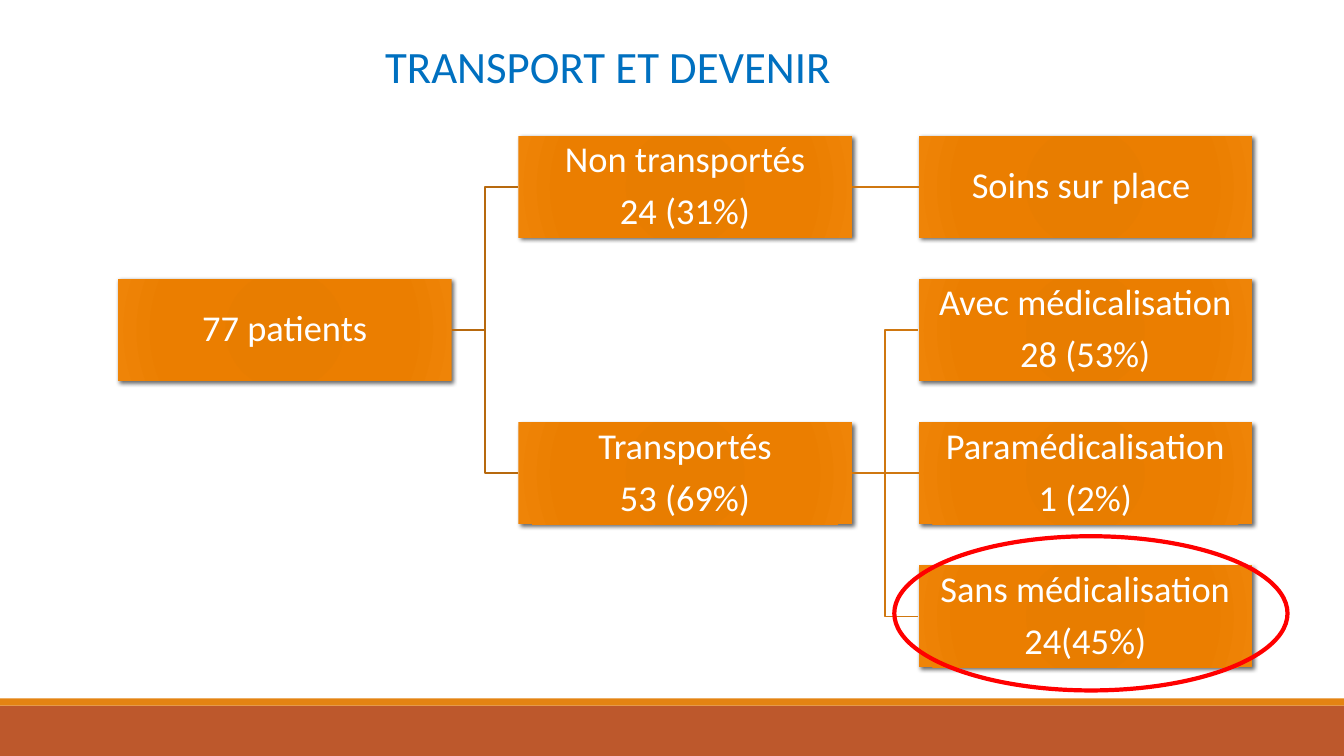
from lxml.etree import SubElement
from pptx import Presentation
from pptx.dml.color import RGBColor
from pptx.enum.shapes import MSO_CONNECTOR, MSO_SHAPE
from pptx.enum.text import MSO_ANCHOR, PP_ALIGN
from pptx.oxml import parse_xml
from pptx.oxml.ns import nsdecls, qn
from pptx.util import Inches, Pt

BLUE = RGBColor(0x00, 0x70, 0xC0)
WHITE = RGBColor(0xFF, 0xFF, 0xFF)
RED = RGBColor(0xFF, 0x00, 0x00)
RUST = RGBColor(0xBD, 0x58, 0x2C)
ORANGE = RGBColor(0xE4, 0x83, 0x12)
FIRST_LINK = RGBColor(0xB7, 0x69, 0x0E)
SECOND_LINK = RGBColor(0xCF, 0x77, 0x10)
BOX_STOPS = [(0, RGBColor(0xE5, 0x7B, 0x00)), (34, RGBColor(0xE8, 0x7D, 0x00)),
             (70, RGBColor(0xEB, 0x7E, 0x00)), (100, RGBColor(0xEF, 0x84, 0x07))]

TITLE = "TRANSPORT ET DEVENIR"
BOXES = {
    "patients": (0, 1, ["77 patients"]),
    "not transported": (1, 0, ["Non transportés", "24 (31%)"]),
    "care on site": (2, 0, ["Soins sur place "]),
    "transported": (1, 2, ["Transportés", "53 (69%)"]),
    "medical": (2, 1, ["Avec médicalisation", "28 (53%)"]),
    "paramedical": (2, 2, ["Paramédicalisation", "1 (2%)"]),
    "no medical": (2, 3, ["Sans médicalisation", "24(45%)"]),
}
LINKS = [
    ("patients", "not transported", FIRST_LINK),
    ("patients", "transported", FIRST_LINK),
    ("not transported", "care on site", SECOND_LINK),
    ("transported", "medical", SECOND_LINK),
    ("transported", "paramedical", SECOND_LINK),
    ("transported", "no medical", SECOND_LINK),
]
BANDS = [(7, 0.5, RUST), (6.93, 0.07, ORANGE)]

SLIDE_WIDTH, SLIDE_HEIGHT = 13.33, 7.5
LEFT, TOP = 1.17, 1.35
COLUMN_STEP, ROW_STEP = 3.97, 1.42
BOX_WIDTH, BOX_HEIGHT = 3.31, 1.01
BOX_FRAME = {"word_wrap": True, "vertical_anchor": MSO_ANCHOR.MIDDLE,
             "margin_left": Inches(0.02), "margin_right": Inches(0.02),
             "margin_top": Inches(0.02), "margin_bottom": Inches(0.02)}
BOX_PARAGRAPH = {"alignment": PP_ALIGN.CENTER, "line_spacing": 0.9, "space_after": Pt(9)}
BOX_FONT = {"name": "Calibri", "size": Pt(26)}
TITLE_PLACE = {"left": Inches(3.72), "top": Inches(0.33),
               "width": Inches(6.94), "height": Inches(0.64)}
TITLE_FONT = {"name": "Calibri", "size": Pt(32)}


def apply(target, values):
    for name, value in values.items():
        setattr(target, name, value)


def add_plain_shape(slide, kind, left, top, width, height):
    shape = slide.shapes.add_shape(kind, Inches(left), Inches(top), Inches(width), Inches(height))
    shape.shadow.inherit = False
    shape.line.fill.background()
    return shape


def style_box(shape):
    shape.fill.gradient()
    properties = shape.element.spPr
    stops = "".join(f'<a:gs pos="{position * 1000}"><a:srgbClr val="{color}"/></a:gs>'
                    for position, color in BOX_STOPS)
    gradient = parse_xml(
        f'<a:gradFill {nsdecls("a")} rotWithShape="1"><a:gsLst>{stops}</a:gsLst>'
        '<a:path path="circle"><a:fillToRect l="100000" t="100000" r="100000" b="100000"/>'
        '</a:path></a:gradFill>')
    properties.replace(properties.find(qn("a:gradFill")), gradient)
    shadow = parse_xml(
        f'<a:outerShdw {nsdecls("a")} blurRad="{Pt(3)}" dist="{Pt(2)}" dir="2700000" '
        'algn="ctr" rotWithShape="0"><a:srgbClr val="000000"><a:alpha val="60000"/>'
        '</a:srgbClr></a:outerShdw>')
    properties.find(qn("a:effectLst")).append(shadow)


def add_box(slide, column, row, lines):
    shape = add_plain_shape(slide, MSO_SHAPE.RECTANGLE, LEFT + column * COLUMN_STEP,
                            TOP + row * ROW_STEP, BOX_WIDTH, BOX_HEIGHT)
    style_box(shape)
    frame = shape.text_frame
    apply(frame, BOX_FRAME)
    frame.text = "\n".join(lines)
    for paragraph in frame.paragraphs:
        apply(paragraph, BOX_PARAGRAPH)
        font = paragraph.runs[0].font
        apply(font, BOX_FONT)
        font.color.rgb = WHITE
    return shape


def add_link(slide, start, end, color):
    kind = MSO_CONNECTOR.STRAIGHT if start.top == end.top else MSO_CONNECTOR.ELBOW
    connector = slide.shapes.add_connector(kind, 0, 0, 0, 0)
    connector.begin_connect(start, 3)
    connector.end_connect(end, 1)
    connector.line.color.rgb = color
    connector.line.width = Pt(1.25)
    SubElement(connector.element.spPr, qn("a:effectLst"))


def add_title(slide):
    title = slide.shapes.title
    apply(title, TITLE_PLACE)
    title.text = TITLE
    apply(title.text_frame, {"word_wrap": True, "vertical_anchor": MSO_ANCHOR.TOP})
    paragraph = title.text_frame.paragraphs[0]
    paragraph.alignment = PP_ALIGN.LEFT
    font = paragraph.runs[0].font
    apply(font, TITLE_FONT)
    font.color.rgb = BLUE


def main():
    presentation = Presentation()
    presentation.slide_width = Inches(SLIDE_WIDTH)
    presentation.slide_height = Inches(SLIDE_HEIGHT)
    slide = presentation.slides.add_slide(presentation.slide_layouts[5])
    for top, height, color in BANDS:
        band = add_plain_shape(slide, MSO_SHAPE.RECTANGLE, 0, top, SLIDE_WIDTH, height)
        band.fill.solid()
        band.fill.fore_color.rgb = color
    add_title(slide)
    boxes = {name: add_box(slide, *content) for name, content in BOXES.items()}
    for start, end, color in LINKS:
        add_link(slide, boxes[start], boxes[end], color)
    highlight = add_plain_shape(slide, MSO_SHAPE.OVAL, 8.87, 5.32, 3.9, 1.53)
    highlight.fill.background()
    highlight.line.color.rgb = RED
    highlight.line.width = Pt(3)
    presentation.save("out.pptx")


if __name__ == "__main__":
    main()
